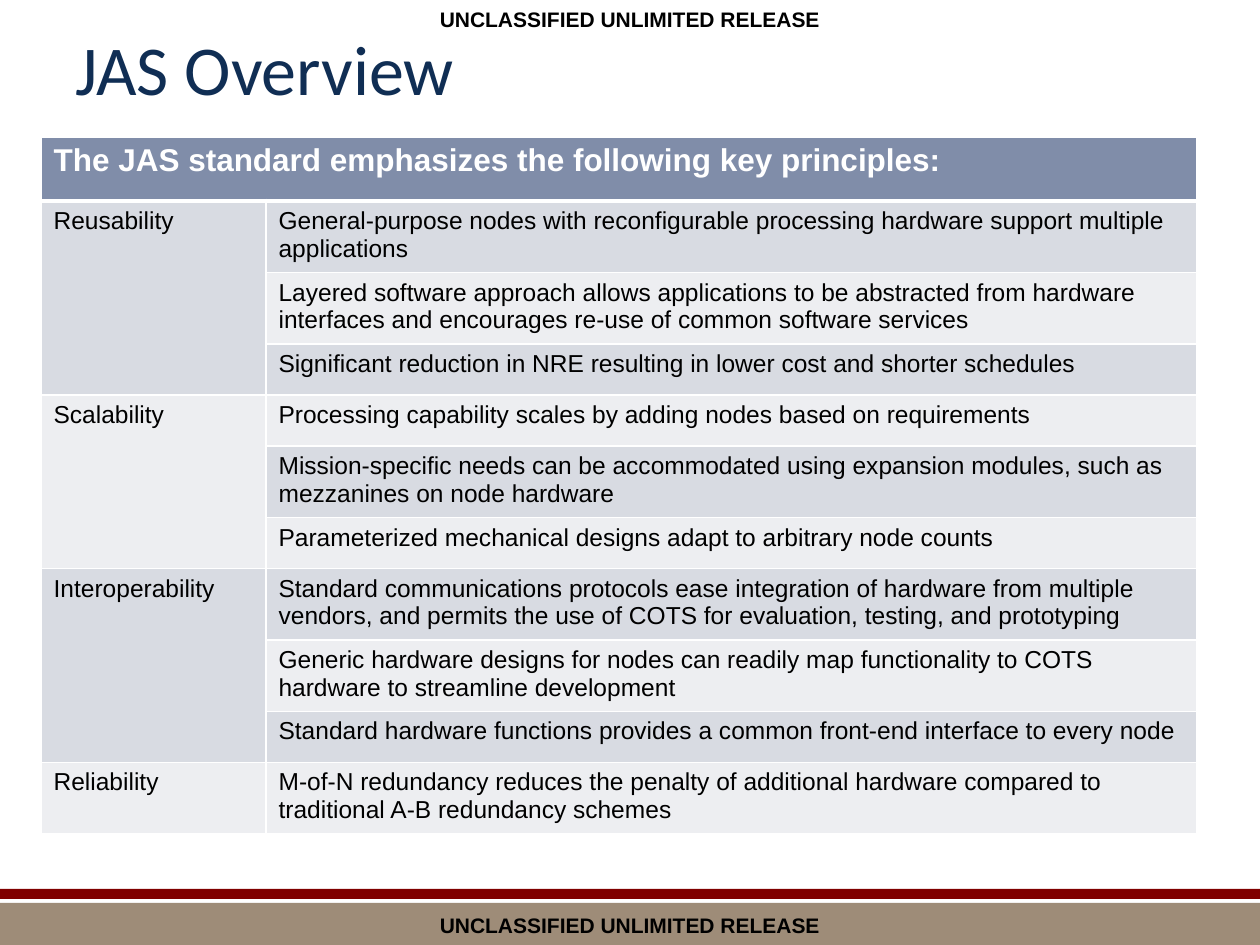
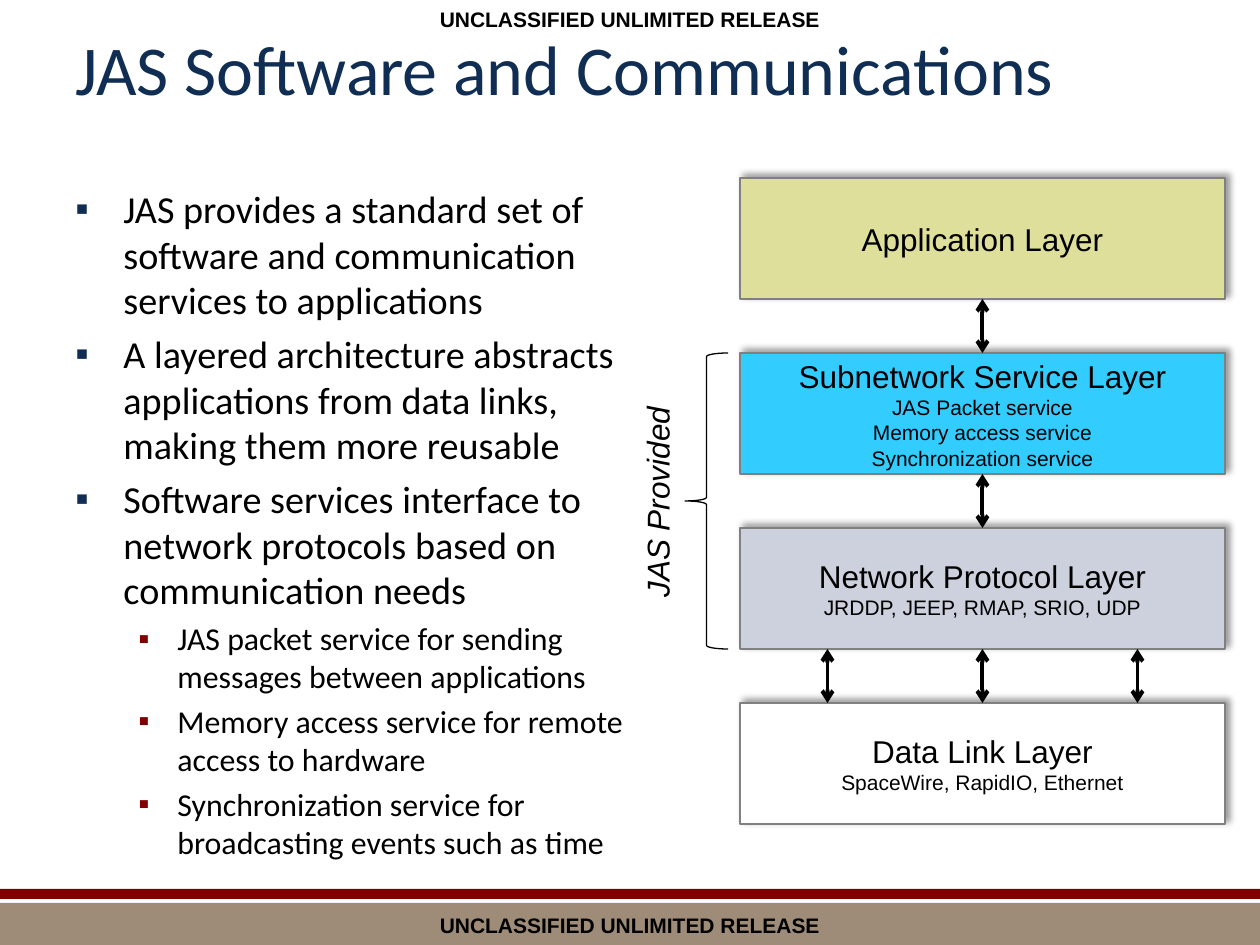
from dataclasses import dataclass
from itertools import pairwise

from lxml.etree import SubElement
from pptx import Presentation
from pptx.dml.color import RGBColor
from pptx.enum.shapes import MSO_CONNECTOR as Connector, MSO_SHAPE as Shape
from pptx.enum.text import MSO_ANCHOR as Anchor, PP_ALIGN as Align
from pptx.oxml.ns import qn
from pptx.util import Pt

EMU_PER_PX = 914400 / 126
SLIDE_WIDTH, SLIDE_HEIGHT = 1260, 945


@dataclass(frozen=True)
class Theme:
    navy: str = "102E54"
    maroon: str = "800000"
    tan: str = "9E8C78"
    black: str = "000000"
    white: str = "FFFFFF"
    outline: str = "808080"
    header_fill: str = "808DA9"
    row_fills: tuple = ("D8DBE2", "EDEEF1")
    heading_font: str = "Calibri"
    label_font: str = "Arial"
    title_size: float = 40
    bullet_sizes: tuple = (21.8, 18.2)
    layer_size: float = 18
    detail_size: float = 12
    cell_size: float = 14


THEME = Theme()

RELEASE_MARKING = "UNCLASSIFIED UNLIMITED RELEASE"

OVERVIEW_TITLE = "JAS Overview"
PRINCIPLES_HEADER = "The JAS standard emphasizes the following key principles:"
PRINCIPLES = {
    "Reusability": [
        "General-purpose nodes with reconfigurable processing hardware support multiple applications",
        "Layered software approach allows applications to be abstracted from hardware interfaces "
        "and encourages re-use of common software services",
        "Significant reduction in NRE resulting in lower cost and shorter schedules",
    ],
    "Scalability": [
        "Processing capability scales by adding nodes based on requirements",
        "Mission-specific needs can be accommodated using expansion modules, such as mezzanines "
        "on node hardware",
        "Parameterized mechanical designs adapt to arbitrary node counts",
    ],
    "Interoperability": [
        "Standard communications protocols ease integration of hardware from multiple vendors, "
        "and permits the use of COTS for evaluation, testing, and prototyping",
        "Generic hardware designs for nodes can readily map functionality to COTS hardware "
        "to streamline development",
        "Standard hardware functions provides a common front-end interface to every node",
    ],
    "Reliability": [
        "M-of-N redundancy reduces the penalty of additional hardware compared to traditional "
        "A-B redundancy schemes",
    ],
}

SOFTWARE_TITLE = "JAS Software and Communications"
SOFTWARE_BULLETS = [
    (0, "JAS provides a standard set of software and communication services to applications"),
    (0, "A layered architecture abstracts applications from data links, making them more reusable"),
    (0, "Software services interface to network protocols based on communication needs"),
    (1, "JAS packet service for sending messages between applications"),
    (1, "Memory access service for remote access to hardware"),
    (1, "Synchronization service for broadcasting events such as time"),
]
# Each level: left indent, hanging indent, bullet colour
BULLET_LEVELS = [(48, 48, THEME.navy), (102, 39, THEME.maroon)]

LAYERS = [
    ("Application Layer", [], "DFDF9C"),
    ("Subnetwork Service Layer",
     ["JAS Packet service", "Memory access service", "Synchronization service"], "33CCFF"),
    ("Network Protocol Layer", ["JRDDP, JEEP, RMAP, SRIO, UDP"], "CCD1DD"),
    ("Data Link Layer", ["SpaceWire, RapidIO, Ethernet"], THEME.white),
]
PROVIDED_LABEL = "JAS Provided"
LAYER_LEFT, LAYER_TOP, LAYER_WIDTH, LAYER_HEIGHT, LAYER_PITCH = 740, 178, 485, 121, 175
LINK_SPACING = 155


def px(length):
    return round(length * EMU_PER_PX)


def box(*lengths):
    return [px(length) for length in lengths]


def rgb(colour):
    return RGBColor.from_string(colour)


def style(paragraph, size, colour=THEME.black, name=THEME.label_font, bold=False, italic=False):
    font = paragraph.font
    font.size, font.name, font.bold, font.italic = Pt(size), name, bold, italic
    font.color.rgb = rgb(colour)


def add_text(slide, place, text, align=Align.LEFT, anchor=Anchor.TOP, wrap=True, **font):
    text_box = slide.shapes.add_textbox(*box(*place))
    frame = text_box.text_frame
    frame.word_wrap, frame.vertical_anchor = wrap, anchor
    paragraph = frame.paragraphs[0]
    paragraph.text, paragraph.alignment = text, align
    style(paragraph, **font)
    return text_box


def add_rectangle(slide, place, fill):
    rectangle = slide.shapes.add_shape(Shape.RECTANGLE, *box(*place))
    rectangle.shadow.inherit = False
    rectangle.fill.solid()
    rectangle.fill.fore_color.rgb = rgb(fill)
    rectangle.line.fill.background()
    return rectangle


def add_slide(presentation, title):
    """Add a blank slide with the bands, release markings and title."""
    slide = presentation.slides.add_slide(presentation.slide_layouts[6])
    add_rectangle(slide, (0, 903, SLIDE_WIDTH, 42), THEME.tan)
    add_rectangle(slide, (0, 889, SLIDE_WIDTH, 10), THEME.maroon)
    add_text(slide, (63, 0, 1134, 136), title, anchor=Anchor.MIDDLE,
             size=THEME.title_size, colour=THEME.navy, name=THEME.heading_font)
    for top in (0, 906):
        add_text(slide, (0, top, SLIDE_WIDTH, 38), RELEASE_MARKING, Align.CENTER,
                 size=THEME.detail_size, bold=True)
    return slide


def add_solid_fill(parent, colour, opacity=None):
    fill = SubElement(parent, qn("a:solidFill"))
    SubElement(fill, qn("a:srgbClr"), val=colour)


def paint_cell(cell, fill, top=1, bottom=1):
    """Fill a cell and give it white borders, widths in points."""
    properties = cell._tc.get_or_add_tcPr()
    for side, width in (("L", 1), ("R", 1), ("T", top), ("B", bottom)):
        border = SubElement(properties, qn(f"a:ln{side}"), w=str(Pt(width)))
        add_solid_fill(border, THEME.white)
    cell.fill.solid()
    cell.fill.fore_color.rgb = rgb(fill)


def write_cell(cell, text, **font):
    paragraph = cell.text_frame.paragraphs[0]
    paragraph.text = text
    style(paragraph, **font)


def add_principles_table(slide):
    row_count = 1 + sum(len(statements) for statements in PRINCIPLES.values())
    header_height, row_height = 64, 51
    height = header_height + row_height * (row_count - 1)
    table = slide.shapes.add_table(row_count, 2, *box(41, 137, 1156, height)).table
    table.first_row = table.horz_banding = False
    for column, width in zip(table.columns, (225, 931)):
        column.width = px(width)
    for index, row in enumerate(table.rows):
        row.height = px(row_height if index else header_height)
        fill = THEME.row_fills[(index - 1) % 2] if index else THEME.header_fill
        for cell in row.cells:
            paint_cell(cell, fill, top=3 if index == 1 else 1, bottom=1 if index else 3)

    table.cell(0, 0).merge(table.cell(0, 1))
    write_cell(table.cell(0, 0), PRINCIPLES_HEADER,
               size=THEME.layer_size, colour=THEME.white, bold=True)
    first = 1
    for principle, statements in PRINCIPLES.items():
        last = first + len(statements) - 1
        if last > first:
            table.cell(first, 0).merge(table.cell(last, 0))
        write_cell(table.cell(first, 0), principle, size=THEME.cell_size)
        for row, statement in enumerate(statements, first):
            write_cell(table.cell(row, 1), statement, size=THEME.cell_size)
        first = last + 1


def add_bullets(slide):
    frame = slide.shapes.add_textbox(*box(63, 179, 585, 668)).text_frame
    frame.word_wrap = True
    for index, (level, text) in enumerate(SOFTWARE_BULLETS):
        paragraph = frame.add_paragraph() if index else frame.paragraphs[0]
        paragraph.text, paragraph.level = text, level
        indent, hanging, colour = BULLET_LEVELS[level]
        size = THEME.bullet_sizes[level]
        properties = paragraph._p.get_or_add_pPr()
        properties.set("marL", str(px(indent)))
        properties.set("indent", str(-px(hanging)))
        bullet_colour = SubElement(properties, qn("a:buClr"))
        SubElement(bullet_colour, qn("a:srgbClr"), val=colour)
        SubElement(properties, qn("a:buFont"), typeface=THEME.label_font)
        SubElement(properties, qn("a:buChar"), char="▪")
        if index:
            paragraph.space_before = Pt(round(size * 0.2, 1))
        style(paragraph, size, name=THEME.heading_font)


def add_shadow(shape):
    effects = shape._element.spPr.find(qn("a:effectLst"))
    shadow = SubElement(effects, qn("a:outerShdw"), blurRad=str(Pt(4)), dist=str(Pt(3)),
                        dir=str(315 * 60000), algn="bl", rotWithShape="0")
    colour = SubElement(shadow, qn("a:srgbClr"), val=THEME.black)
    SubElement(colour, qn("a:alpha"), val="40000")


def add_layer(slide, top, name, details, fill):
    layer = add_rectangle(slide, (LAYER_LEFT, top, LAYER_WIDTH, LAYER_HEIGHT), fill)
    layer.line.color.rgb, layer.line.width = rgb(THEME.outline), Pt(1)
    add_shadow(layer)
    frame = layer.text_frame
    frame.word_wrap, frame.vertical_anchor = True, Anchor.MIDDLE
    for index, text in enumerate([name, *details]):
        paragraph = frame.add_paragraph() if index else frame.paragraphs[0]
        paragraph.text, paragraph.alignment = text, Align.CENTER
        style(paragraph, THEME.detail_size if index else THEME.layer_size)
    return layer


def add_link(slide, upper, lower, offset=0):
    """Draw a double arrow between two layers, offset in px from their middle."""
    x = upper.left + upper.width // 2 + px(offset)
    link = slide.shapes.add_connector(Connector.STRAIGHT, x, lower.top, x, upper.top + upper.height)
    if offset == 0:
        link.begin_connect(lower, 0)
        link.end_connect(upper, 2)
    link.line.color.rgb, link.line.width = rgb(THEME.black), Pt(2.25)
    line = link.line._get_or_add_ln()
    for end in ("a:headEnd", "a:tailEnd"):
        SubElement(line, qn(end), type="arrow")
    SubElement(link._element.spPr, qn("a:effectLst"))


def add_layer_stack(slide):
    layers = [add_layer(slide, LAYER_TOP + index * LAYER_PITCH, *layer)
              for index, layer in enumerate(LAYERS)]
    for upper, lower in pairwise(layers):
        add_link(slide, upper, lower)
    for offset in (-LINK_SPACING, LINK_SPACING):
        add_link(slide, layers[2], layers[3], offset)

    brace_top, brace_height = LAYER_TOP + LAYER_PITCH, LAYER_PITCH + LAYER_HEIGHT
    brace = slide.shapes.add_shape(Shape.LEFT_BRACE, *box(685, brace_top, 43, brace_height))
    brace.shadow.inherit = False
    brace.fill.background()
    brace.line.color.rgb, brace.line.width = rgb(THEME.black), Pt(0.75)
    label_width, label_height = 218, 50
    label_top = brace_top + (brace_height - label_height) // 2
    label = add_text(slide, (548, label_top, label_width, label_height), PROVIDED_LABEL,
                     wrap=False, size=THEME.layer_size, italic=True)
    label.rotation = 270


def main():
    presentation = Presentation()
    presentation.slide_width, presentation.slide_height = box(SLIDE_WIDTH, SLIDE_HEIGHT)
    add_principles_table(add_slide(presentation, OVERVIEW_TITLE))
    software = add_slide(presentation, SOFTWARE_TITLE)
    add_bullets(software)
    add_layer_stack(software)
    presentation.save("out.pptx")


if __name__ == "__main__":
    main()
